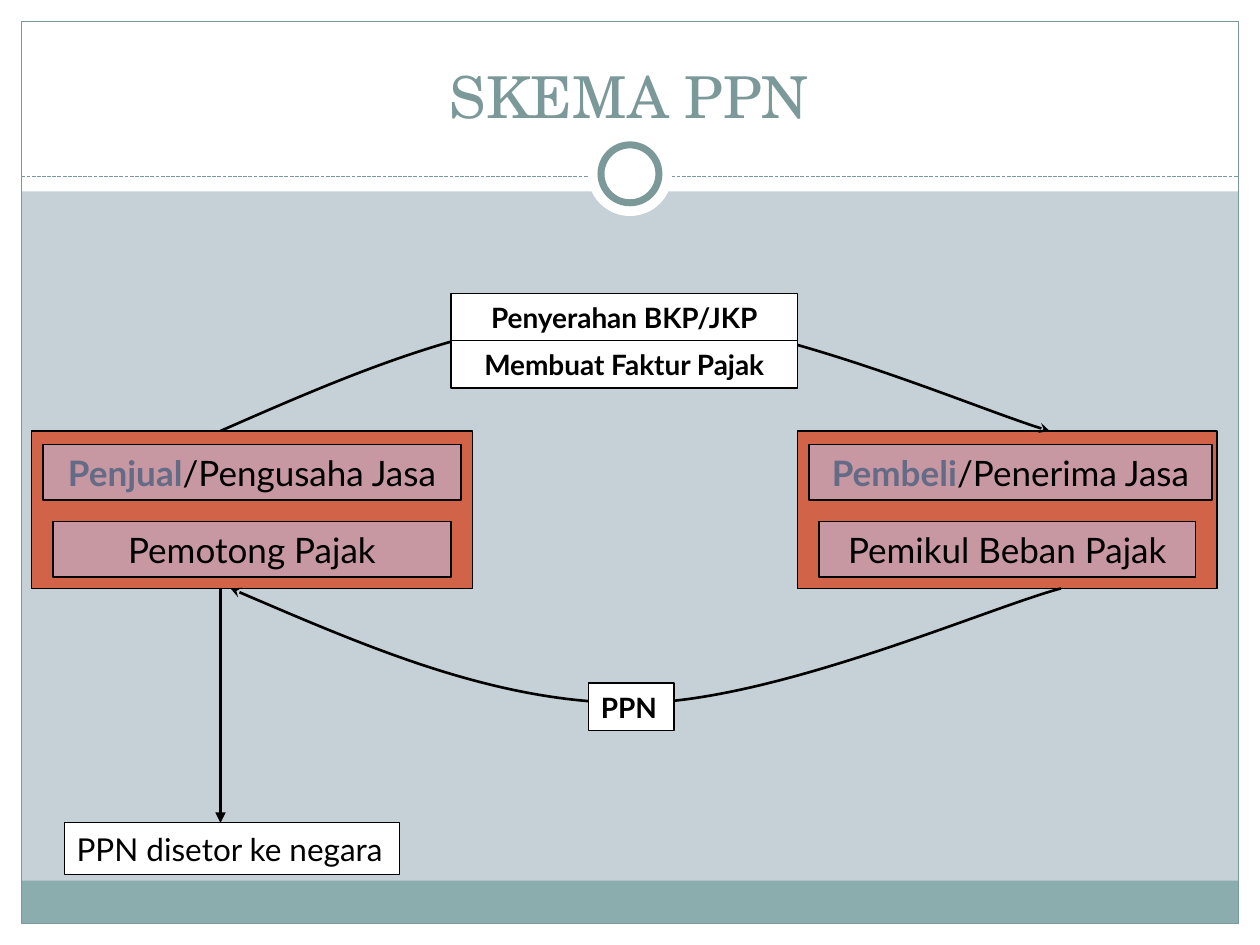
from lxml import etree
from pptx import Presentation
from pptx.dml.color import RGBColor
from pptx.enum.dml import MSO_LINE
from pptx.enum.shapes import MSO_CONNECTOR, MSO_SHAPE
from pptx.enum.text import MSO_ANCHOR, PP_ALIGN
from pptx.oxml.ns import qn
from pptx.util import Inches, Pt

RECT, OVAL = MSO_SHAPE.RECTANGLE, MSO_SHAPE.OVAL
STRAIGHT = MSO_CONNECTOR.STRAIGHT
DASH = MSO_LINE.SQUARE_DOT
LEFT, CENTER = PP_ALIGN.LEFT, PP_ALIGN.CENTER
MIDDLE, BOTTOM = MSO_ANCHOR.MIDDLE, MSO_ANCHOR.BOTTOM

BODY_FONT, TITLE_FONT = "Lato", "TeX Gyre Schola"
WHITE, BLACK, TEAL, FOOTER = "FFFFFF", "000000", "7C999A", "8CADAE"
BACKGROUND, ORANGE, PINK, SLATE = "C5D1D7", "D16349", "C797A2", "646B86"


def rgb(value):
    return RGBColor.from_string(value)


def add_box(s, box, fill=None, line=None, width=0.75, shape=RECT):
    sp = s.shapes.add_shape(shape, *map(Inches, box))
    sp.shadow.inherit = False
    if fill:
        sp.fill.solid()
        sp.fill.fore_color.rgb = rgb(fill)
    else:
        sp.fill.background()
    if line:
        style_line(sp, line, width)
    else:
        sp.line.fill.background()
    return sp


def style_line(sp, color, width):
    sp.line.color.rgb = rgb(color)
    sp.line.width = Pt(width)


def add_label(s, box, text, size, fill=WHITE, bold=False, align=CENTER, lead=""):
    """Outlined box with one line of text; lead is a highlighted first word."""
    sp = add_box(s, box, fill, BLACK)
    tf = sp.text_frame
    tf.word_wrap = False
    tf.vertical_anchor = MIDDLE
    tf.margin_top = tf.margin_bottom = Inches(0.05)
    p = tf.paragraphs[0]
    p.alignment = align
    p.font.name, p.font.size, p.font.bold = BODY_FONT, Pt(size), bold
    p.font.color.rgb = rgb(BLACK)
    if lead:
        r = p.add_run()
        r.text = lead
        r.font.bold = True
        r.font.color.rgb = rgb(SLATE)
    p.add_run().text = text


def add_arrowhead(sp, end, kind):
    etree.SubElement(sp.line._get_or_add_ln(), qn(f"a:{end}"), type=kind)


def add_line(s, start, end, color, width):
    c = s.shapes.add_connector(STRAIGHT, *map(Inches, start + end))
    etree.SubElement(c.element.spPr, qn("a:effectLst"))
    style_line(c, color, width)
    return c


def add_curve(s, points, arrow_end):
    """Bezier curve: a start point, then three points for each segment."""
    start, *rest = [(Inches(x), Inches(y)) for x, y in points]
    builder = s.shapes.build_freeform(*start)
    builder.add_line_segments(rest, close=False)
    sp = builder.convert_to_shape()
    sp.shadow.inherit = False
    sp.fill.background()
    style_line(sp, BLACK, 1.5)
    add_arrowhead(sp, arrow_end, "stealth")
    path = sp.element.find(".//" + qn("a:path"))
    steps = path.findall(qn("a:lnTo"))
    for i in range(0, len(steps), 3):
        curve = etree.SubElement(path, qn("a:cubicBezTo"))
        for step in steps[i:i + 3]:
            curve.append(step[0])
            path.remove(step)


def add_frame(s, width, height):
    margin = 0.17
    inner = width - 2 * margin
    # White margins, footer band and outline
    add_box(s, (0, height - margin, width, margin), WHITE)
    add_box(s, (0, 0, width, 1.52), WHITE)
    for left in (0, width - margin):
        add_box(s, (left, 0, margin, height), WHITE)
    add_box(s, (margin, 6.99, inner, 0.34), FOOTER)
    add_box(s, (margin, margin, inner, height - 2 * margin), line=TEAL)
    # Dashed rule with a ring in the middle
    rule = add_line(s, (margin, 1.4), (width - margin, 1.4), TEAL, 0.75)
    rule.line.dash_style = DASH
    for size, line in ((0.67, None), (0.46, TEAL)):
        add_box(s, ((width - size) / 2, 1.38 - size / 2, size, size),
                WHITE, line, 4, OVAL)


def add_title(s, box, text):
    title = s.shapes.title
    title.left, title.top, title.width, title.height = map(Inches, box)
    s.shapes.element.append(title.element)  # in front of the frame
    tf = title.text_frame
    tf.text = text
    tf.vertical_anchor = BOTTOM
    p = tf.paragraphs[0]
    p.alignment = CENTER
    p.font.name, p.font.size = TITLE_FONT, Pt(33)
    p.font.color.rgb = rgb(TEAL)


def add_party(s, box, top_label, lead, rest, role):
    """Orange panel with the party above and its role below."""
    left, top, width, height = box
    add_box(s, box, ORANGE, BLACK)
    add_label(s, (left + 0.09, top + 0.11, top_label, 0.44), rest, 20, PINK, lead=lead)
    add_label(s, (left + 0.17, top + 0.72, width - 0.34, 0.44), role, 20, PINK)


def add_flows(s):
    # Delivery from seller to buyer, and tax back to the seller
    add_curve(s, [(1.75, 3.42), (2.8, 2.96), (3.85, 2.5), (4.95, 2.5),
                  (6.04, 2.5), (7.77, 3.26), (8.33, 3.42)], "tailEnd")
    add_curve(s, [(1.83, 4.67), (2.88, 5.12), (3.93, 5.58), (5.03, 5.58),
                  (6.13, 5.58), (7.85, 4.82), (8.42, 4.67)], "headEnd")
    # Labels on the flows
    add_label(s, (4.67, 5.42, 0.68, 0.38), "PPN", 16, bold=True, align=LEFT)
    for i, text in enumerate(("Penyerahan BKP/JKP", "Membuat Faktur Pajak")):
        add_label(s, (3.58, 2.33 + i * 0.37, 2.75, 0.38), text, 16, bold=True)
    # Payment to the state
    add_label(s, (0.51, 6.53, 2.66, 0.41), "PPN disetor ke negara", 18, align=LEFT)
    payment = add_line(s, (1.75, 4.67), (1.75, 6.53), BLACK, 1.5)
    add_arrowhead(payment, "tailEnd", "triangle")


def main():
    prs = Presentation()
    prs.slide_width, prs.slide_height = Inches(10), Inches(7.5)
    s = prs.slides.add_slide(prs.slide_layouts[5])
    s.background.fill.solid()
    s.background.fill.fore_color.rgb = rgb(BACKGROUND)
    add_frame(s, 10, 7.5)
    add_title(s, (0.33, 0.25, 9.33, 0.83), "SKEMA PPN")
    add_party(s, (0.25, 3.42, 3.5, 1.25), 3.32,
              "Penjual", "/Pengusaha Jasa", "Pemotong Pajak")
    add_party(s, (6.33, 3.42, 3.33, 1.25), 3.2,
              "Pembeli", "/Penerima Jasa", "Pemikul Beban Pajak")
    add_flows(s)
    prs.save("out.pptx")


if __name__ == "__main__":
    main()
